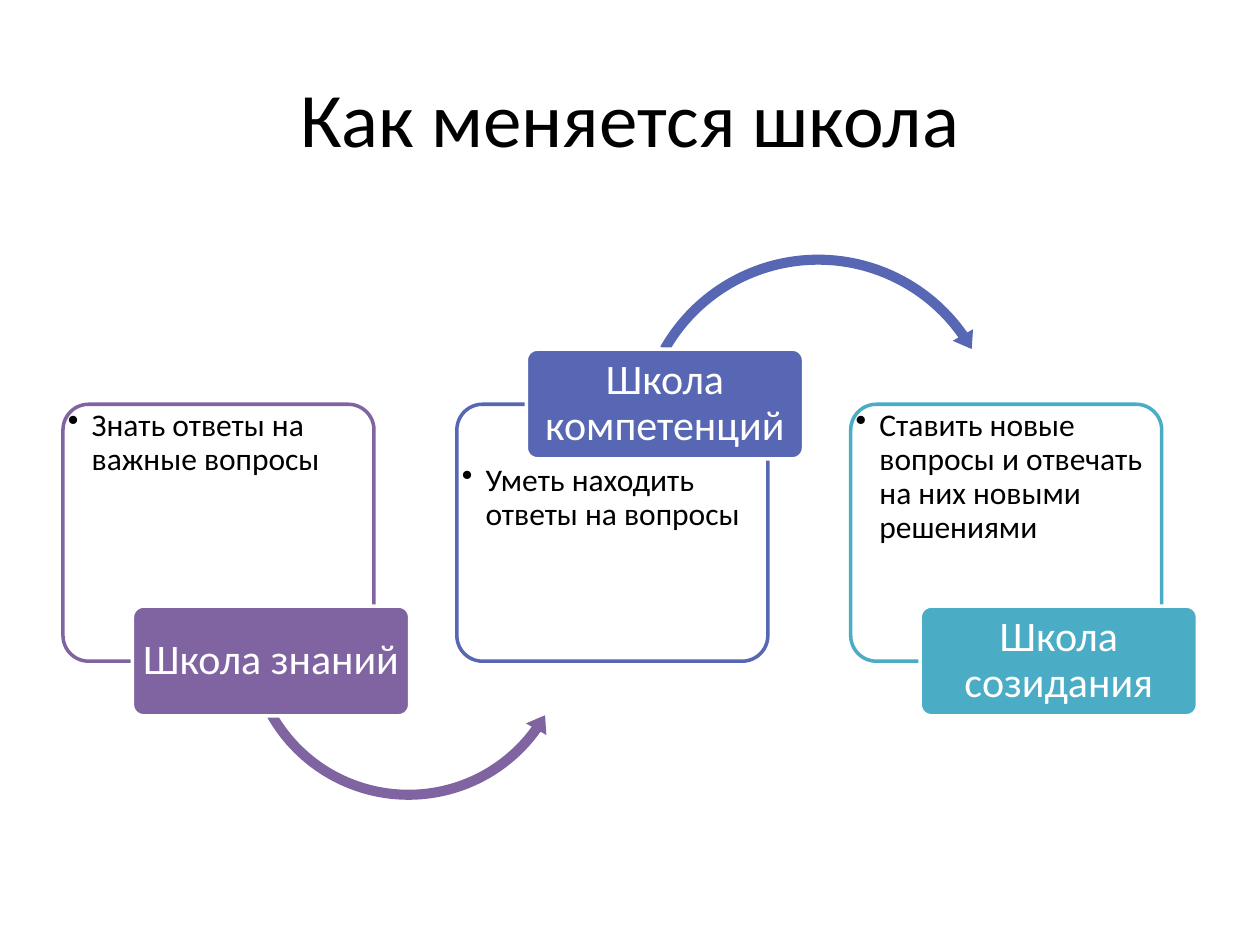
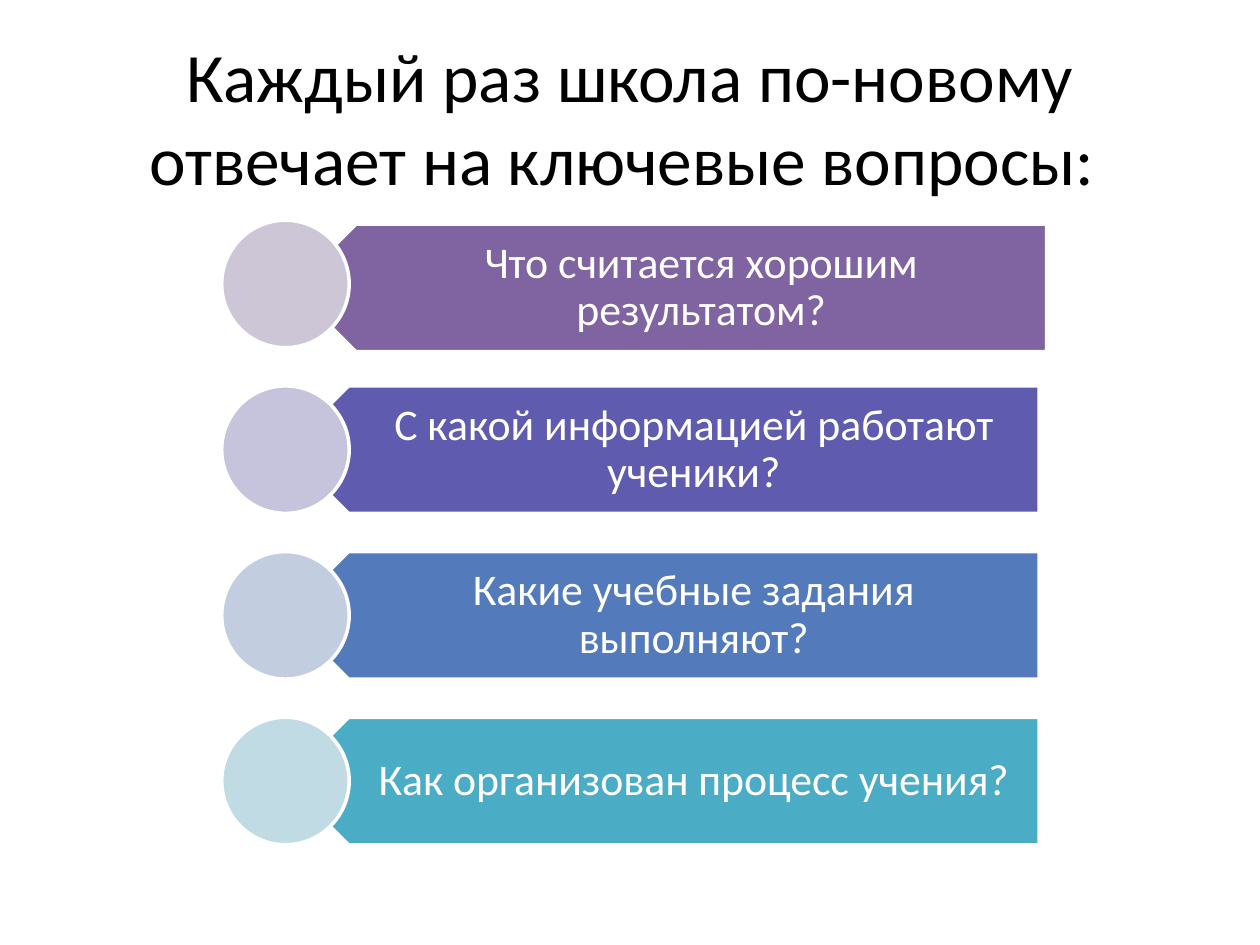
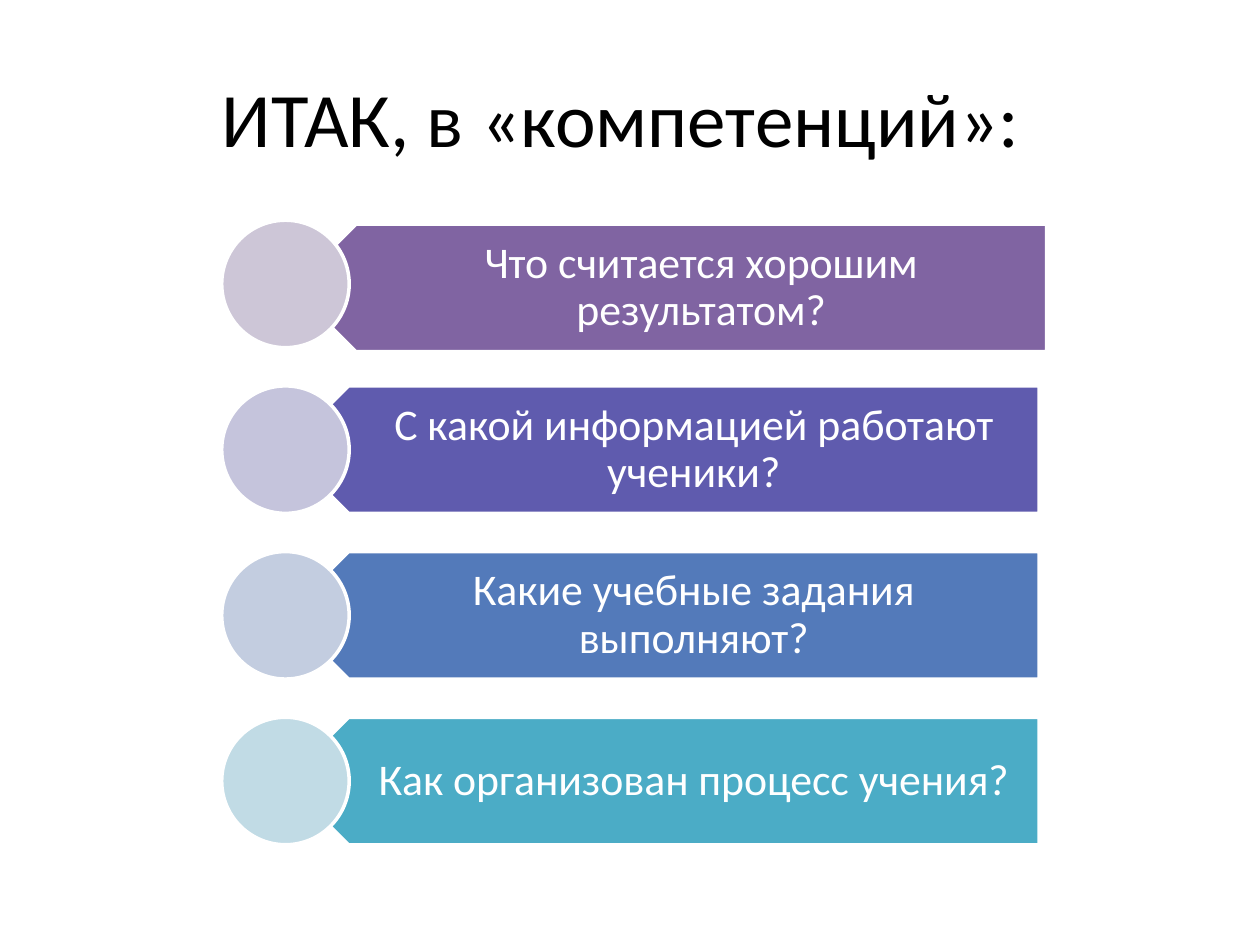
from dataclasses import dataclass
from typing import Any

import lxml.etree
import pptx
import pptx.dml.color
import pptx.enum.shapes
import pptx.enum.text
import pptx.oxml.ns
import pptx.presentation
import pptx.shapes.autoshape
import pptx.slide
import pptx.text.text
import pptx.util

Cm = pptx.util.Cm
Pt = pptx.util.Pt
Shape = pptx.shapes.autoshape.Shape
Slide = pptx.slide.Slide
KIND = pptx.enum.shapes.MSO_SHAPE
ANCHOR = pptx.enum.text.MSO_ANCHOR
ALIGN = pptx.enum.text.PP_ALIGN

BLACK, WHITE = "000000", "FFFFFF"
PURPLE, INDIGO, TEAL = "8064A2", "5767B4", "4BACC6"
FONT = "Calibri"
LINE_WIDTH = 2

CARD_W, CARD_H, CARD_TOP, CARD_STEP = 6.27, 5.18, 8.15, 7.94
CARD_LEFT, CARD_TEXT_H = 1.27, 4.06
TAG_W, TAG_H, TAG_SHIFT = 5.59, 2.21, 1.4
TAG_TOP_HIGH, TAG_TOP_LOW = 7.04, 12.22
CORNER = 0.1

BAR_W, BAR_H, BAR_LEFT = 15.21, 2.57, 5.74
ROW_TOP, ROW_STEP = 4.44, 3.34
DISC_LEFT, LABEL_SHIFT, LABEL_W = 4.47, 0.64, 14.55


@dataclass(frozen=True)
class Box:
    left: float
    top: float
    width: float
    height: float


@dataclass(frozen=True)
class TextStyle:
    size: float
    color: str
    align: Any
    anchor: Any
    inset: tuple[float, float, float, float]
    spacing: float = 1.0
    bullet_indent: float = 0


@dataclass(frozen=True)
class Arrow:
    kind: Any
    left: float
    top: float
    size: float
    thickness: float
    head: float
    degrees: tuple[float, float, float]


@dataclass(frozen=True)
class School:
    name: str
    answer: str
    color: str
    tag_high: bool = False
    arrow: Arrow | None = None


@dataclass(frozen=True)
class Question:
    text: str
    color: str
    tint: str
    shift: tuple[float, float] = (0, 0)


TITLE_BOX = Box(1.27, 0.76, 22.86, 3.18)
TITLE_INSET = (0.25, 0.13, 0.25, 0.13)
CARD_STYLE = TextStyle(18, BLACK, ALIGN.LEFT, ANCHOR.TOP, (0.1, 0.1, 0.1, 0.1), 0.9, 0.48)
TAG_STYLE = TextStyle(24, WHITE, ALIGN.CENTER, ANCHOR.MIDDLE, (0.06, 0.02, 0.06, 0.02), 0.9)
LABEL_STYLE = TextStyle(25, WHITE, ALIGN.CENTER, ANCHOR.MIDDLE, (1.14, 0.25, 0.48, 0.25), 0.9)

SCHOOLS = [
    School("Школа знаний", "Знать ответы на важные вопросы", PURPLE,
           arrow=Arrow(KIND.LEFT_CIRCULAR_ARROW, 4.83, 9.45, 6.81, 2.98, 3.48,
                       (6.06, 35.65, 150.41))),
    School("Школа компетенций", "Уметь находить ответы на вопросы", INDIGO, True,
           Arrow(KIND.CIRCULAR_ARROW, 12.7, 5, 7.59, 2.67, 3.11,
                 (5.38, 325.03, 209.59))),
    School("Школа созидания",
           "Ставить новые вопросы и отвечать на них новыми решениями", TEAL),
]

QUESTIONS = [
    Question("Что считается хорошим результатом?", PURPLE, "CDC6D7", (0.15, 0.08)),
    Question("С какой информацией работают ученики?", "5F5BAE", "C5C4DC"),
    Question("Какие учебные задания выполняют?", "537ABA", "C3CDE0"),
    Question("Как организован процесс учения?", TEAL, "C1DBE5"),
]


def rgb(value: str) -> pptx.dml.color.RGBColor:
    return pptx.dml.color.RGBColor.from_string(value)


def apply(target: Any, values: dict[str, Any]) -> None:
    for name, value in values.items():
        setattr(target, name, value)


def place(box: Box) -> tuple[int, int, int, int]:
    return Cm(box.left), Cm(box.top), Cm(box.width), Cm(box.height)


def add_bullet(p: Any, indent: float) -> None:
    pPr = p._p.get_or_add_pPr()
    pPr.set("marL", str(int(Cm(indent))))
    pPr.set("indent", str(-int(Cm(indent))))
    bullet = lxml.etree.SubElement(pPr, pptx.oxml.ns.qn("a:buChar"))
    bullet.set("char", "•")


def write(tf: pptx.text.text.TextFrame, text: str, style: TextStyle) -> None:
    left, top, right, bottom = map(Cm, style.inset)
    apply(tf, {"word_wrap": True, "vertical_anchor": style.anchor,
               "margin_left": left, "margin_top": top,
               "margin_right": right, "margin_bottom": bottom})
    p = tf.paragraphs[0]
    apply(p, {"alignment": style.align, "line_spacing": style.spacing})
    if style.bullet_indent:
        add_bullet(p, style.bullet_indent)
    r = p.add_run()
    r.text = text
    apply(r.font, {"name": FONT, "size": Pt(style.size)})
    r.font.color.rgb = rgb(style.color)


def add_text(s: Slide, box: Box, text: str, style: TextStyle) -> None:
    write(s.shapes.add_textbox(*place(box)).text_frame, text, style)


def add_shape(s: Slide, kind: Any, box: Box, fill: str, line: str | None = WHITE) -> Shape:
    sp = s.shapes.add_shape(kind, *place(box))
    sp.shadow.inherit = False
    sp.fill.solid()
    sp.fill.fore_color.rgb = rgb(fill)
    if line is None:
        sp.line.fill.background()
    else:
        sp.line.color.rgb = rgb(line)
        sp.line.width = Pt(LINE_WIDTH)
    return sp


def add_round_box(s: Slide, box: Box, fill: str, line: str) -> Shape:
    sp = add_shape(s, KIND.ROUNDED_RECTANGLE, box, fill, line)
    sp.adjustments[0] = CORNER
    return sp


def add_arrow(s: Slide, arrow: Arrow, color: str) -> None:
    box = Box(arrow.left, arrow.top, arrow.size, arrow.size)
    sp = add_shape(s, arrow.kind, box, color, None)
    angles = [degree * 0.6 for degree in arrow.degrees]
    for i, value in enumerate([arrow.thickness / 100, *angles, arrow.head / 100]):
        sp.adjustments[i] = value


def add_school(s: Slide, column: int, school: School) -> None:
    left = CARD_LEFT + column * CARD_STEP
    tag_top = TAG_TOP_HIGH if school.tag_high else TAG_TOP_LOW
    text_top = tag_top + TAG_H if school.tag_high else CARD_TOP
    add_round_box(s, Box(left, CARD_TOP, CARD_W, CARD_H), WHITE, school.color)
    add_text(s, Box(left, text_top, CARD_W, CARD_TEXT_H), school.answer, CARD_STYLE)
    if school.arrow:
        add_arrow(s, school.arrow, school.color)
    tag = add_round_box(s, Box(left + TAG_SHIFT, tag_top, TAG_W, TAG_H), school.color, WHITE)
    write(tag.text_frame, school.name, TAG_STYLE)


def add_question(s: Slide, row: int, question: Question) -> None:
    row_top = ROW_TOP + row * ROW_STEP
    dx, dy = question.shift
    left, top = BAR_LEFT + dx, row_top + dy
    bar = add_shape(s, KIND.PENTAGON, Box(left, top, BAR_W, BAR_H), question.color)
    bar.rotation = 180
    add_text(s, Box(left + LABEL_SHIFT, top, LABEL_W, BAR_H), question.text, LABEL_STYLE)
    add_shape(s, KIND.OVAL, Box(DISC_LEFT, row_top, BAR_H, BAR_H), question.tint)


def add_slide(prs: pptx.presentation.Presentation, title: str, size: float = 44) -> Slide:
    s = prs.slides.add_slide(prs.slide_layouts[6])
    style = TextStyle(size, BLACK, ALIGN.CENTER, ANCHOR.MIDDLE, TITLE_INSET)
    add_text(s, TITLE_BOX, title, style)
    return s


def add_question_slide(prs: pptx.presentation.Presentation, title: str, size: float = 44) -> None:
    s = add_slide(prs, title, size)
    for row, question in enumerate(QUESTIONS):
        add_question(s, row, question)


def main() -> None:
    prs = pptx.Presentation()
    apply(prs, {"slide_width": Cm(25.4), "slide_height": Cm(19.05)})
    s = add_slide(prs, "Как меняется школа")
    for column, school in enumerate(SCHOOLS):
        add_school(s, column, school)
    add_question_slide(prs, "Каждый раз школа по-новому отвечает на ключевые вопросы: ", 39.6)
    add_question_slide(prs, "ИТАК, в «компетенций»: ")
    prs.save("out.pptx")


if __name__ == "__main__":
    main()
